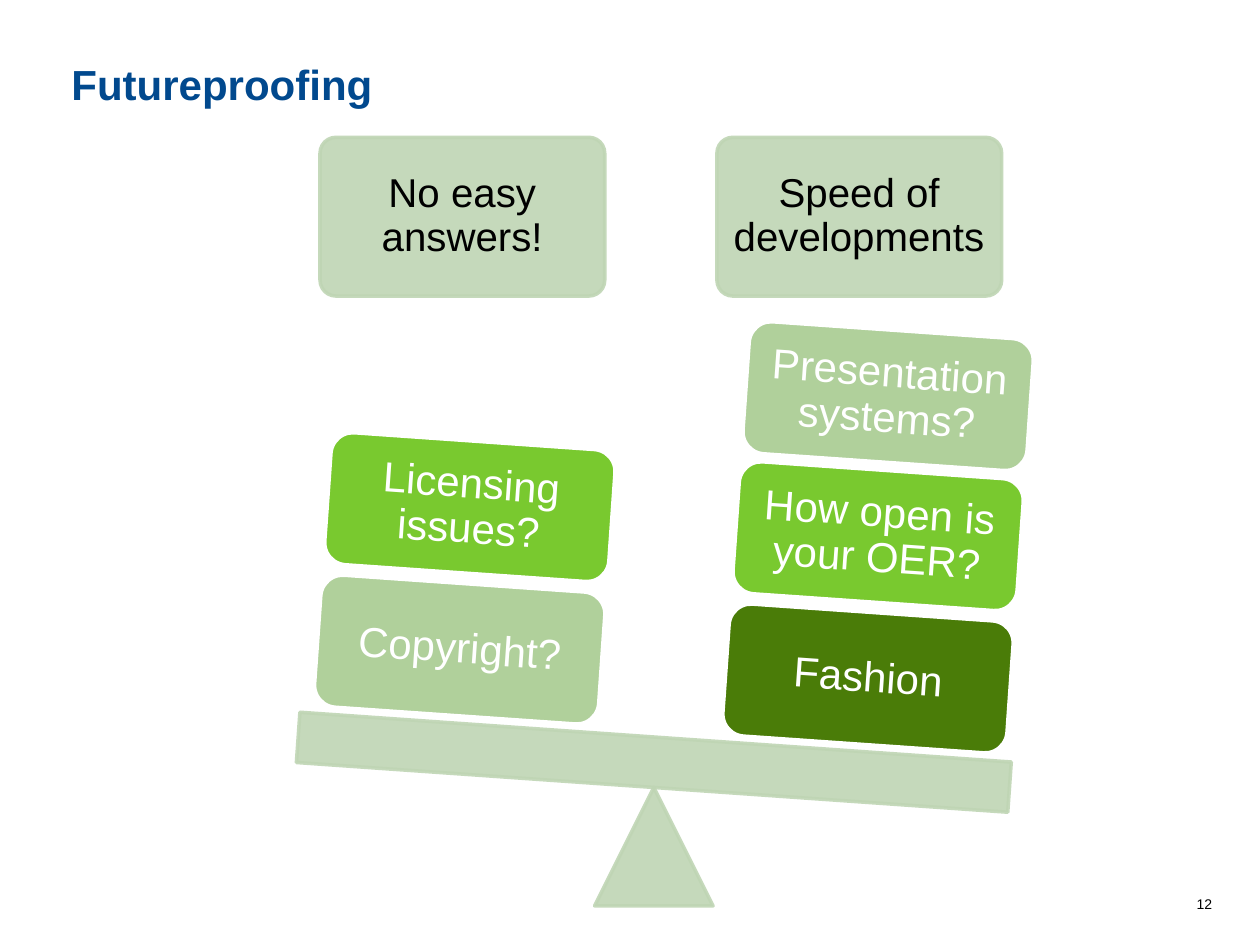
from dataclasses import dataclass
from typing import Optional

from lxml.etree import SubElement
from pptx import Presentation
from pptx.dml.color import RGBColor
from pptx.enum.shapes import MSO_SHAPE as Shape
from pptx.enum.text import MSO_ANCHOR as Anchor, PP_ALIGN as Align
from pptx.oxml.ns import qn
from pptx.util import Pt

BLACK = RGBColor(0x00, 0x00, 0x00)
WHITE = RGBColor(0xFF, 0xFF, 0xFF)
BLUE = RGBColor(0x01, 0x49, 0x8E)
PALE = RGBColor(0xBF, 0xD5, 0xB4)
SAGE = RGBColor(0xB0, 0xD0, 0x9B)
LIME = RGBColor(0x79, 0xC9, 0x2F)
MOSS = RGBColor(0x4A, 0x7C, 0x08)

FONT = "Arial"
TILT = 4
WIDE = 162.72  # width of every card
TALL = 75.6  # height of a weight on the beam


@dataclass
class Part:
    kind: Shape
    left: float
    top: float
    width: float
    height: float
    fill: RGBColor = PALE
    line: RGBColor = PALE
    alpha: int = 90
    turn: float = 0
    round: Optional[float] = None
    text: str = ""
    size: float = 23
    ink: RGBColor = BLACK


def head(left: float, text: str) -> Part:
    return Part(Shape.ROUNDED_RECTANGLE, left, 78.5, WIDE, 90.72,
                round=0.1, text=text)


def weight(left: float, top: float, fill: RGBColor, text: str) -> Part:
    return Part(Shape.ROUNDED_RECTANGLE, left, top, WIDE, TALL, fill, WHITE,
                100, TILT, text=text, size=24, ink=WHITE)


PARTS = [
    # Headings
    head(182.9, "No easy answers!"),
    head(409.7, "Speed of developments"),
    # Pivot and beam
    Part(Shape.ISOSCELES_TRIANGLE, 339.8, 450, 67.7, 67.7),
    Part(Shape.RECTANGLE, 169.9, 421.2, 407.5, 28.8, turn=TILT),
    # Right pile, from the beam up
    weight(414.7, 349.9, MOSS, "Fashion"),
    weight(420.5, 268.6, LIME, "How open is your OER?"),
    weight(426.2, 188.6, SAGE, "Presentation systems?"),
    # Left pile, from the beam up
    weight(181.4, 333.4, SAGE, "Copyright?"),
    weight(187.2, 252, LIME, "Licensing issues?"),
]


def fade(fill, alpha: int) -> None:
    """Make a solid colour partly transparent."""
    for tone in fill.iter(qn("a:srgbClr")):
        SubElement(tone, qn("a:alpha")).set("val", str(alpha * 1000))


def style(para, text: str, size: float, ink: RGBColor, align: Align) -> None:
    para.text = text
    para.alignment = align
    para.font.name = FONT
    para.font.size = Pt(size)
    para.font.color.rgb = ink


def draw(slide, part: Part) -> None:
    shape = slide.shapes.add_shape(
        part.kind, Pt(part.left), Pt(part.top), Pt(part.width), Pt(part.height))
    shape.shadow.inherit = False
    shape.rotation = part.turn
    if part.round is not None:
        shape.adjustments[0] = part.round
    shape.fill.solid()
    shape.fill.fore_color.rgb = part.fill
    shape.line.color.rgb = part.line
    shape.line.width = Pt(2)
    if part.alpha < 100:
        fade(shape.element.spPr, part.alpha)
    if part.text:
        frame = shape.text_frame
        frame.word_wrap = True
        frame.vertical_anchor = Anchor.MIDDLE
        frame.margin_left = frame.margin_right = Pt(6)
        frame.margin_top = frame.margin_bottom = Pt(7.2)
        para = frame.paragraphs[0]
        style(para, part.text, part.size, part.ink, Align.CENTER)
        para.line_spacing = 0.9


def label(slide, left: float, top: float, width: float, height: float,
          text: str, size: float, ink: RGBColor, align: Align,
          bold: bool = False) -> None:
    box = slide.shapes.add_textbox(Pt(left), Pt(top), Pt(width), Pt(height))
    box.text_frame.word_wrap = True
    para = box.text_frame.paragraphs[0]
    style(para, text, size, ink, align)
    para.font.bold = bold


def main() -> None:
    deck = Presentation()
    deck.slide_width, deck.slide_height = Pt(720), Pt(540)
    slide = deck.slides.add_slide(deck.slide_layouts[6])

    # Page number and title
    label(slide, 388, 508.3, 311.8, 17.3, "12", 8, BLACK, Align.RIGHT)
    label(slide, 33.8, 30, 652.3, 36, "Futureproofing", 24, BLUE,
          Align.LEFT, bold=True)

    # Scales
    for part in PARTS:
        draw(slide, part)

    deck.save("out.pptx")


if __name__ == "__main__":
    main()
